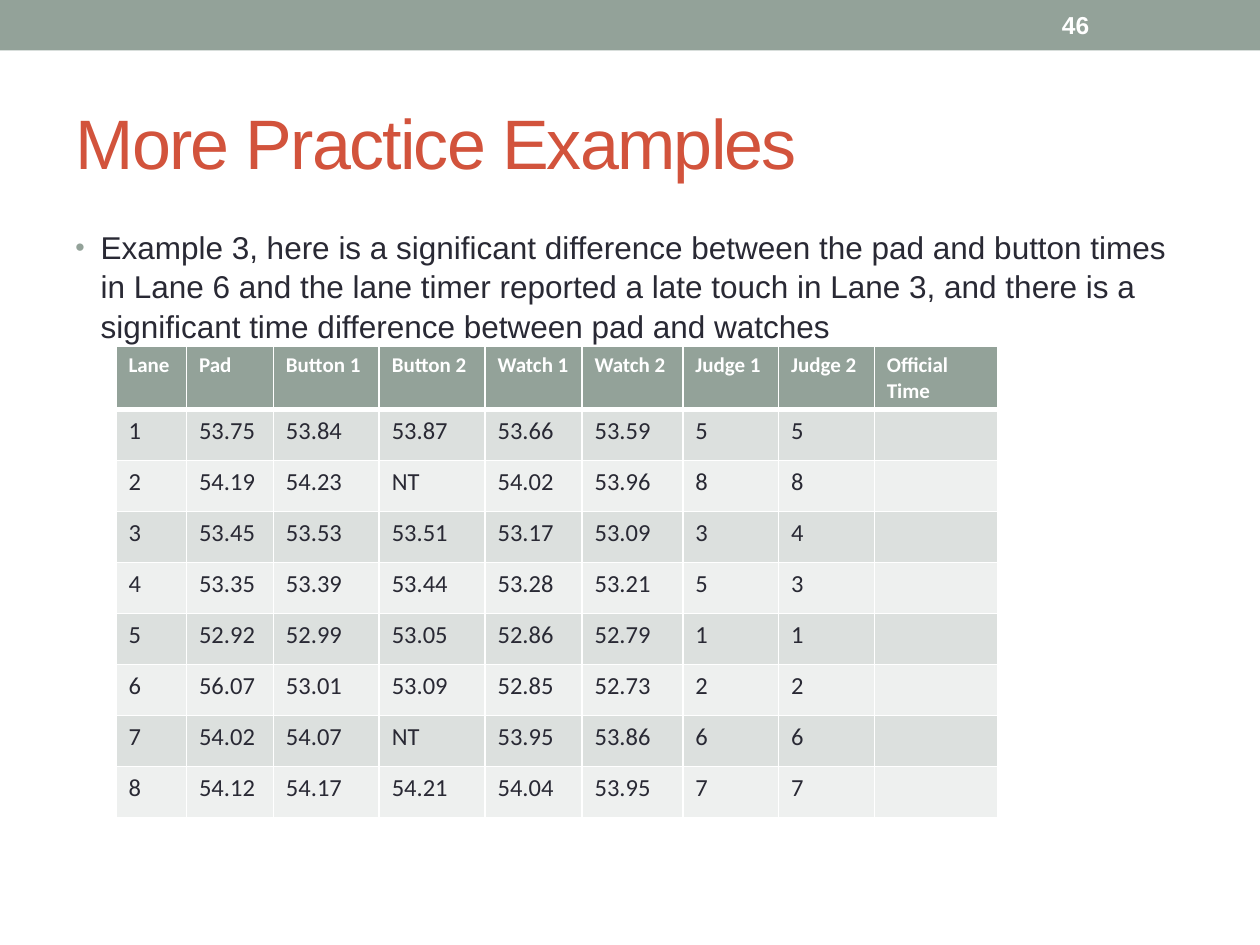
from dataclasses import dataclass

from lxml.etree import SubElement
from pptx import Presentation
from pptx.dml.color import RGBColor
from pptx.enum.shapes import MSO_SHAPE
from pptx.enum.text import MSO_ANCHOR, PP_ALIGN
from pptx.oxml.ns import qn
from pptx.util import Inches, Pt

GRID = Inches(0.5)
GRID_COLUMNS, GRID_ROWS = 20, 15

SAGE, RUST, INK, WHITE = "93A299", "D2533C", "292934", "FFFFFF"
BANDS = ("DCE0DE", "EEF0EF")

BODY_TEXT = (
    "Example 3, here is a significant difference between the pad and button times "
    "in Lane 6 and the lane timer reported a late touch in Lane 3, and there is a "
    "significant time difference between pad and watches"
)
HEADERS = ("Lane", "Pad", "Button 1", "Button 2", "Watch 1", "Watch 2",
           "Judge 1", "Judge 2", "Official Time")
COLUMN_SPANS = (1.12, 1.38, 1.68, 1.68, 1.54, 1.6, 1.52, 1.52, 1.96)
HEADER_SPAN, LANE_SPAN = 1, 0.81
LANES = (
    ("1", "53.75", "53.84", "53.87", "53.66", "53.59", "5", "5", ""),
    ("2", "54.19", "54.23", "NT", "54.02", "53.96", "8", "8", ""),
    ("3", "53.45", "53.53", "53.51", "53.17", "53.09", "3", "4", ""),
    ("4", "53.35", "53.39", "53.44", "53.28", "53.21", "5", "3", ""),
    ("5", "52.92", "52.99", "53.05", "52.86", "52.79", "1", "1", ""),
    ("6", "56.07", "53.01", "53.09", "52.85", "52.73", "2", "2", ""),
    ("7", "54.02", "54.07", "NT", "53.95", "53.86", "6", "6", ""),
    ("8", "54.12", "54.17", "54.21", "54.04", "53.95", "7", "7", ""),
)


@dataclass(frozen=True)
class Area:
    """A rectangle in columns and rows of the slide grid."""
    left: float
    top: float
    width: float
    height: float

    def lengths(self) -> tuple:
        return tuple(span(value) for value in
                     (self.left, self.top, self.width, self.height))


@dataclass(frozen=True)
class TextStyle:
    size: float
    color: str
    font: str = "Arial"
    bold: bool = False


HEADER_STYLE = TextStyle(12, WHITE, "Calibri", True)
LANE_STYLE = TextStyle(14, INK, "Calibri")


def span(cells: float) -> int:
    return round(cells * GRID)


def color(value: str) -> RGBColor:
    return RGBColor.from_string(value)


def write(text_frame, text: str, style: TextStyle):
    text_frame.text = text
    paragraph = text_frame.paragraphs[0]
    paragraph.alignment = PP_ALIGN.LEFT
    for run in paragraph.runs:
        run.font.name = style.font
        run.font.size = Pt(style.size)
        run.font.bold = style.bold
        run.font.color.rgb = color(style.color)
    return paragraph


def add_bar(slide, area: Area) -> None:
    bar = slide.shapes.add_shape(MSO_SHAPE.RECTANGLE, *area.lengths())
    bar.shadow.inherit = False
    bar.fill.solid()
    bar.fill.fore_color.rgb = color(SAGE)
    bar.line.fill.background()


def set_title(slide, area: Area, text: str) -> None:
    title = slide.shapes.title
    title.left, title.top, title.width, title.height = area.lengths()
    title.text_frame.vertical_anchor = MSO_ANCHOR.MIDDLE
    paragraph = write(title.text_frame, text, TextStyle(40, RUST))
    paragraph.runs[0].font._element.set("spc", "-100")


def add_text(slide, area: Area, text: str, style: TextStyle,
             anchor: MSO_ANCHOR = MSO_ANCHOR.TOP):
    box = slide.shapes.add_textbox(*area.lengths())
    box.text_frame.word_wrap = True
    box.text_frame.vertical_anchor = anchor
    return write(box.text_frame, text, style)


def add_bullet(paragraph) -> None:
    paragraph.space_before = Pt(3.6)
    paragraph.line_spacing = 1.04
    properties = paragraph._p.get_or_add_pPr()
    indent = Inches(0.2)
    properties.set("marL", str(indent))
    properties.set("indent", str(-indent))
    bullet_color = SubElement(properties, qn("a:buClr"))
    SubElement(bullet_color, qn("a:srgbClr"), val=SAGE)
    SubElement(properties, qn("a:buSzPct"), val="85000")
    SubElement(properties, qn("a:buFont"), typeface="Arial")
    SubElement(properties, qn("a:buChar"), char="•")


def set_borders(cell, top: float, bottom: float) -> None:
    properties = cell._tc.get_or_add_tcPr()
    for side, width in (("L", 1), ("R", 1), ("T", top), ("B", bottom)):
        line = SubElement(properties, qn(f"a:ln{side}"), w=str(Pt(width)))
        fill = SubElement(line, qn("a:solidFill"))
        SubElement(fill, qn("a:srgbClr"), val=WHITE)


def add_times_table(slide, left: float, top: float) -> None:
    row_spans = (HEADER_SPAN,) + (LANE_SPAN,) * len(LANES)
    area = Area(left, top, sum(COLUMN_SPANS), sum(row_spans))
    table = slide.shapes.add_table(
        len(row_spans), len(COLUMN_SPANS), *area.lengths()).table
    for column, width in zip(table.columns, COLUMN_SPANS):
        column.width = span(width)
    for row_index, values in enumerate((HEADERS, *LANES)):
        row = table.rows[row_index]
        row.height = span(row_spans[row_index])
        is_header = row_index == 0
        for cell, value in zip(row.cells, values):
            write(cell.text_frame, value, HEADER_STYLE if is_header else LANE_STYLE)
            set_borders(cell, top=3 if row_index == 1 else 1,
                        bottom=3 if is_header else 1)
            cell.fill.solid()
            cell.fill.fore_color.rgb = color(
                SAGE if is_header else BANDS[(row_index - 1) % 2])


def main() -> None:
    presentation = Presentation()
    presentation.slide_width = span(GRID_COLUMNS)
    presentation.slide_height = span(GRID_ROWS)
    slide = presentation.slides.add_slide(presentation.slide_layouts[5])

    add_bar(slide, Area(0, 0, GRID_COLUMNS, 0.8))
    set_title(slide, Area(1, 1.16, 18, 2.16), "More Practice Examples")
    add_text(slide, Area(16.66, 0.04, 2.34, 0.72), "46",
             TextStyle(14, WHITE, bold=True), MSO_ANCHOR.MIDDLE)
    add_bullet(add_text(slide, Area(1, 3.5, 18, 10.66), BODY_TEXT,
                        TextStyle(18, INK)))
    add_times_table(slide, left=1.84, top=5.5)

    presentation.save("out.pptx")


if __name__ == "__main__":
    main()
